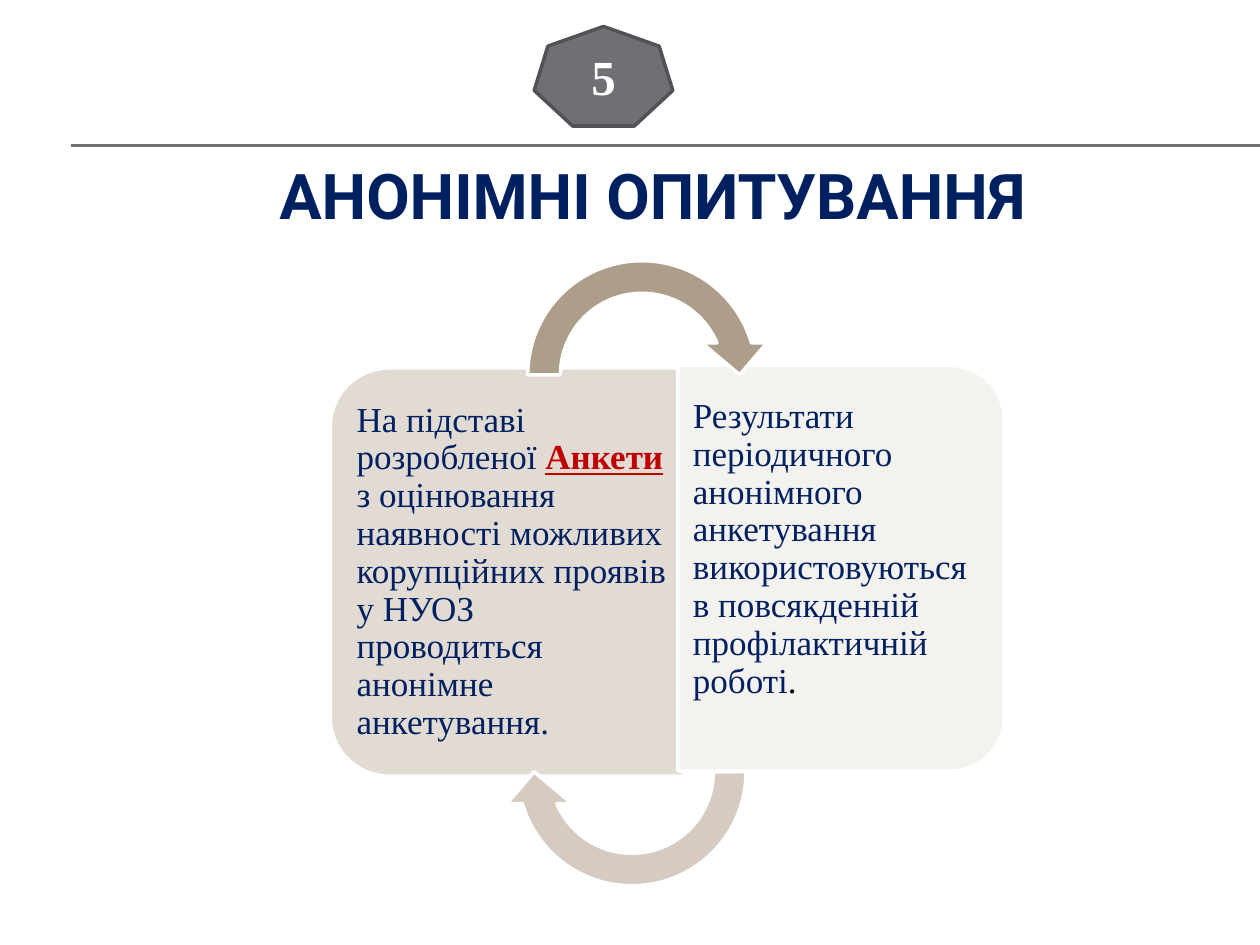
import pptx
import pptx.util
import pptx.dml.color
import pptx.enum.shapes
import pptx.enum.text
import pptx.oxml
from pptx.util import Inches, Pt

SHAPE = pptx.enum.shapes.MSO_SHAPE
ALIGN = pptx.enum.text.PP_ALIGN
ANCHOR = pptx.enum.text.MSO_ANCHOR
SERIF = "Times New Roman"
COLORS = {
    "navy": "002060", "red": "C00000", "black": "000000", "white": "FFFFFF",
    "grey": "6F6F74", "edge": "525256", "sand": "E2DBD4", "pale": "F4F2EF",
    "brown": "AC9E8A", "beige": "D5CBC0",
}


def color(name):
    return pptx.dml.color.RGBColor.from_string(COLORS[name])


def style(font, size, tint, bold=False, face=SERIF):
    font.name, font.size, font.bold = face, Pt(size), bold
    font.color.rgb = color(tint)


def shape(slide, kind, box, fill, edge="white"):
    item = slide.shapes.add_shape(kind, *map(Inches, box))
    item.shadow.inherit = False
    item.fill.solid()
    item.fill.fore_color.rgb = color(fill)
    item.line.color.rgb = color(edge)
    item.line.width = Pt(2)
    return item


def textbox(slide, box, pads):
    frame = slide.shapes.add_textbox(*map(Inches, box)).text_frame
    frame.word_wrap = True
    (frame.margin_left, frame.margin_top,
     frame.margin_right, frame.margin_bottom) = map(Inches, pads)
    return frame


def header(slide, box):
    """Number badge, double rule and title."""
    left, top, width, height = box
    for drop in (0.94, 0.95):
        y = Inches(top + drop)
        rule = slide.shapes.add_connector(
            pptx.enum.shapes.MSO_CONNECTOR.STRAIGHT,
            Inches(left + 0.13), y, Inches(10), y)
        rule.line.color.rgb = color("grey")
        rule.line.width = Pt(0.75)
        rule._element.spPr.append(pptx.oxml.parse_xml(
            '<a:effectLst xmlns:a='
            '"http://schemas.openxmlformats.org/drawingml/2006/main"/>'))

    title = textbox(slide, (left, top + 0.94, width, height - 0.94),
                    (0.1, 0.05, 0.1, 0.05))
    title.vertical_anchor = ANCHOR.MIDDLE
    para = title.paragraphs[0]
    para.text = "АНОНІМНІ ОПИТУВАННЯ"
    para.alignment = ALIGN.CENTER
    style(para.font, 36, "navy", True, "Roboto")

    badge = shape(slide, SHAPE.HEPTAGON, (left + 3.81, top, 1.1, 0.79),
                  "grey", "edge")
    badge.text_frame.vertical_anchor = ANCHOR.MIDDLE
    para = badge.text_frame.paragraphs[0]
    para.text = "5"
    para.alignment = ALIGN.CENTER
    style(para.font, 28, "white", True)


def panel(slide, box, turn, fill, inner, pads, runs):
    """Card rounded on one side; inner is the text box relative to the card."""
    left, top, width, height = box
    # The shape is turned a quarter, so its sides swap around the centre.
    shift = (height - width) / 2
    card = shape(slide, SHAPE.ROUND_2_SAME_RECTANGLE,
                 (left - shift, top + shift, height, width), fill)
    card.rotation = turn
    card.adjustments[0] = 0.167
    card.adjustments[1] = 0

    dx, dy, wide, high = inner
    frame = textbox(slide, (left + dx, top + dy, wide, high), pads)
    para = frame.paragraphs[0]
    para.line_spacing = 0.9
    for text, tint, strong in runs:
        run = para.add_run()
        run.text = text
        style(run.font, 20, tint, strong)
        run.font.underline = strong


def arrow(slide, box, turn, fill):
    item = shape(slide, SHAPE.CIRCULAR_ARROW, box, fill)
    item.rotation = turn
    for i, value in enumerate((0.125, 11.42319, 204.57681, 108, 0.125)):
        item.adjustments[i] = value


def cycle(slide, box):
    """Two cards joined by a pair of round arrows."""
    left, top = box[:2]
    panel(slide, (left, top + 0.98, 2.81, 3.24), 270, "sand",
          (0.13, 0.13, 2.68, 2.97), (0.08, 0.14, 0.12, 0.14),
          [("На підставі розробленої ", "navy", False),
           ("Анкети", "red", True),
           (" з оцінювання наявності можливих корупційних проявів у НУОЗ "
            "проводиться анонімне анкетування.", "navy", False)])
    panel(slide, (left + 2.76, top + 0.96, 2.59, 3.22), 90, "pale",
          (0, 0.12, 2.46, 2.96), (0.12, 0.14, 0.08, 0.14),
          [("Результати періодичного анонімного анкетування "
            "використовуються в повсякденній профілактичній роботі",
            "navy", False),
           (".", "black", False)])
    arrow(slide, (left + 1.44, top, 2.07, 2.07), 0, "brown")
    arrow(slide, (left + 1.36, top + 3.15, 2.07, 2.07), 180, "beige")


def main():
    deck = pptx.Presentation()
    deck.slide_width, deck.slide_height = Inches(10), Inches(7.5)
    slide = deck.slides.add_slide(deck.slide_layouts[6])
    header(slide, (0.43, 0.21, 9.5, 1.73))
    cycle(slide, (2.62, 1.94, 5.35, 5.22))
    deck.save("out.pptx")


if __name__ == "__main__":
    main()
